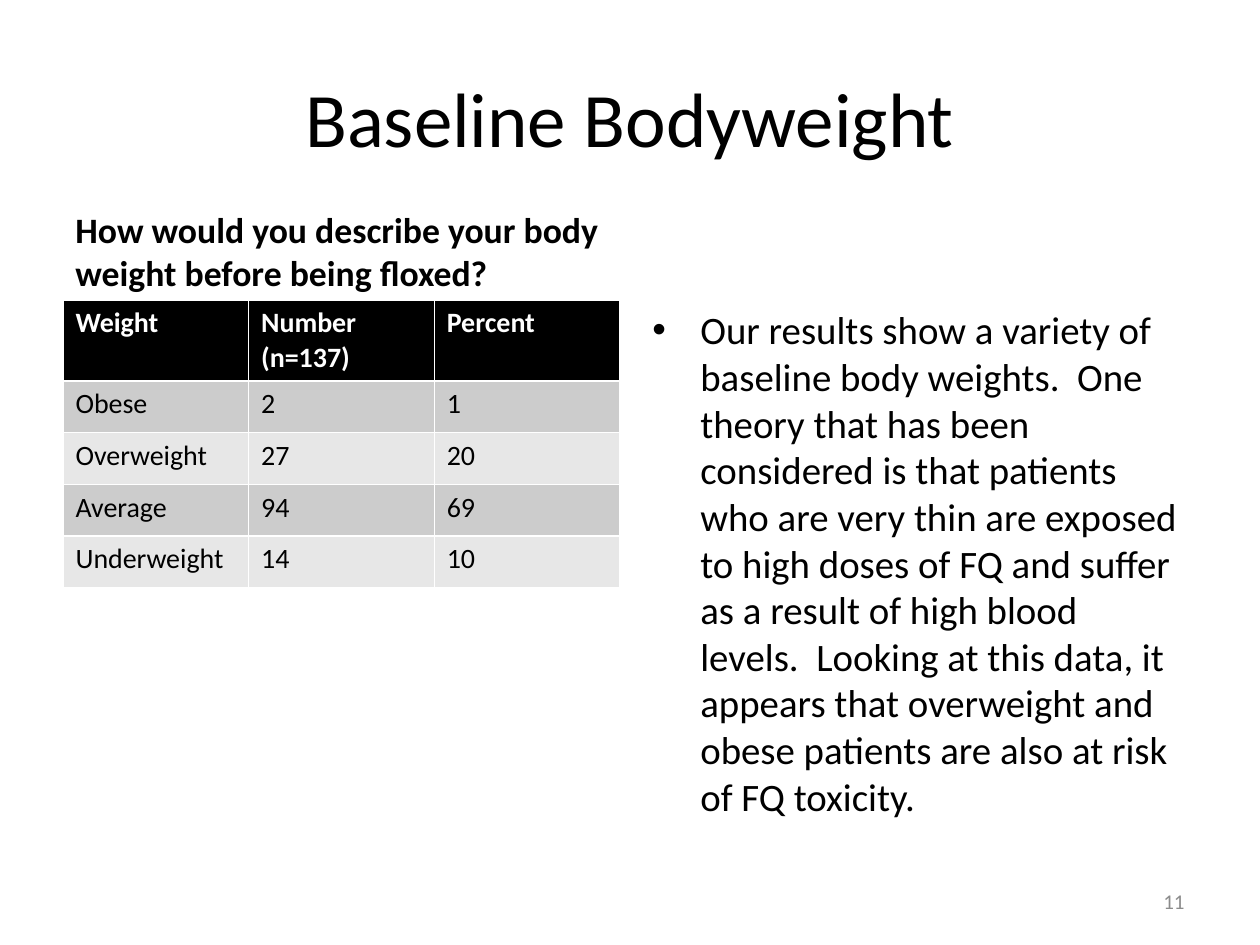
from lxml import etree
from pptx import Presentation
from pptx.dml.color import RGBColor
from pptx.enum.text import MSO_ANCHOR, MSO_AUTO_SIZE, PP_ALIGN
from pptx.oxml.ns import qn
from pptx.util import Inches, Pt

TOP, MIDDLE, BOTTOM = MSO_ANCHOR.TOP, MSO_ANCHOR.MIDDLE, MSO_ANCHOR.BOTTOM
LEFT, CENTER, RIGHT = PP_ALIGN.LEFT, PP_ALIGN.CENTER, PP_ALIGN.RIGHT

TITLE = "Baseline Bodyweight"
QUESTION = "How would you describe your body weight before being floxed?"
WEIGHTS = [
    ("Weight", "Number (n=137)", "Percent"),
    ("Obese", "2", "1"),
    ("Overweight", "27", "20"),
    ("Average", "94", "69"),
    ("Underweight", "14", "10"),
]
FINDING = (
    "Our results show a variety of baseline body weights.  One theory that has "
    "been considered is that patients who are very thin are exposed to high doses "
    "of FQ and suffer as a result of high blood levels.  Looking at this data, it "
    "appears that overweight and obese patients are also at risk of FQ toxicity."
)
PAGE = "11"

FONT = "Calibri"
COLORS = {"black": "000000", "white": "FFFFFF", "gray": "8C8C8C",
          "dark_band": "CCCCCC", "light_band": "E7E7E7"}
WIDTH, HEIGHT = 10, 7.5
MARGIN, GAP = 0.5, 0.16
COL_W = (WIDTH - 2 * MARGIN - GAP) / 2
RIGHT_X = MARGIN + COL_W + GAP
BODY_Y = 2.38
HEADER_H, ROW_H = 0.62, 0.41
INDENT = 0.38


def color(name):
    return RGBColor.from_string(COLORS[name])


def write(tf, text, size, fill="black", bold=False, align=LEFT, before=0):
    p = tf.paragraphs[0]
    p.alignment = align
    p.space_before = Pt(before)
    r = p.add_run()
    r.text = text
    r.font.name = FONT
    r.font.size = Pt(size)
    r.font.bold = bold
    r.font.color.rgb = color(fill)
    return p


def frame(sp, anchor):
    tf = sp.text_frame
    tf.word_wrap = True
    tf.auto_size = MSO_AUTO_SIZE.NONE
    tf.vertical_anchor = anchor
    return tf


def add_text(slide, box, anchor):
    return frame(slide.shapes.add_textbox(*map(Inches, box)), anchor)


def add_bullet(p):
    pPr = p._p.get_or_add_pPr()
    pPr.set("marL", str(Inches(INDENT)))
    pPr.set("indent", str(-Inches(INDENT)))
    etree.SubElement(pPr, qn("a:buFont")).set("typeface", "Arial")
    etree.SubElement(pPr, qn("a:buChar")).set("char", "•")


def add_weights(slide):
    rows, cols = len(WEIGHTS), len(WEIGHTS[0])
    box = (MARGIN, BODY_Y, COL_W, HEADER_H + (rows - 1) * ROW_H)
    table = slide.shapes.add_table(rows, cols, *map(Inches, box)).table
    for col in table.columns:
        col.width = Inches(COL_W / cols)
    for i, values in enumerate(WEIGHTS):
        header = i == 0
        band = "black" if header else "dark_band" if i % 2 else "light_band"
        table.rows[i].height = Inches(HEADER_H if header else ROW_H)
        for j, value in enumerate(values):
            cell = table.cell(i, j)
            cell.fill.solid()
            cell.fill.fore_color.rgb = color(band)
            write(cell.text_frame, value, 16, "white" if header else "black", header)


def main():
    prs = Presentation()
    prs.slide_width, prs.slide_height = Inches(WIDTH), Inches(HEIGHT)
    slide = prs.slides.add_slide(prs.slide_layouts[5])

    title = slide.shapes.title
    title.left, title.top = Inches(MARGIN), Inches(0.3)
    title.width, title.height = Inches(WIDTH - 2 * MARGIN), Inches(1.25)
    write(frame(title, MIDDLE), TITLE, 44, align=CENTER)

    question = add_text(slide, (MARGIN, BODY_Y - 0.7, COL_W, 0.7), BOTTOM)
    write(question, QUESTION, 20.4, bold=True, before=4)
    add_weights(slide)

    finding = add_text(slide, (RIGHT_X, BODY_Y, COL_W, 4.32), TOP)
    add_bullet(write(finding, FINDING, 22.2, before=4.4))

    page = add_text(slide, (WIDTH - MARGIN - 2.33, 6.95, 2.33, 0.4), MIDDLE)
    write(page, PAGE, 12, "gray", align=RIGHT)
    prs.save("out.pptx")


if __name__ == "__main__":
    main()
